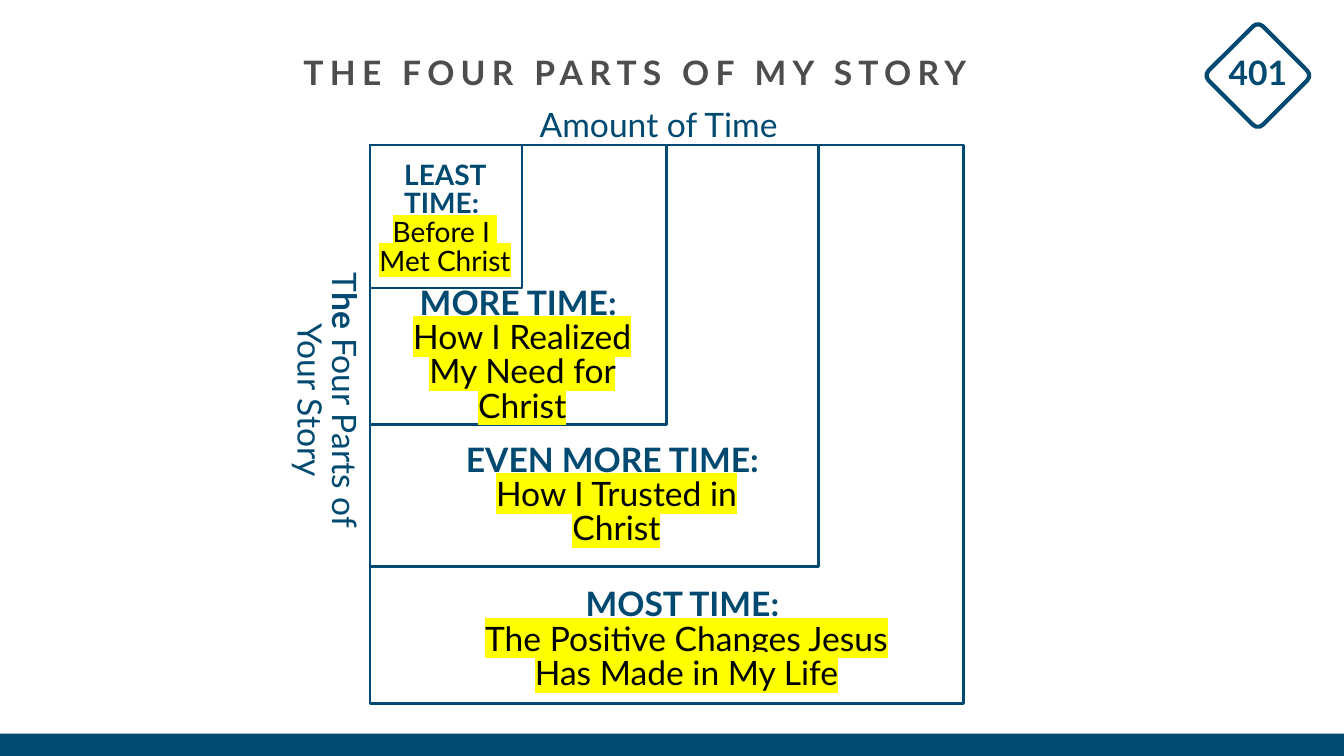
from lxml import etree
from pptx import Presentation
from pptx.dml.color import RGBColor
from pptx.enum.shapes import MSO_SHAPE
from pptx.enum.text import MSO_ANCHOR, PP_ALIGN
from pptx.oxml.ns import qn
from pptx.util import Inches, Pt

RECTANGLE = MSO_SHAPE.RECTANGLE
ROUNDED = MSO_SHAPE.ROUNDED_RECTANGLE
TOP, MIDDLE, BOTTOM = MSO_ANCHOR.TOP, MSO_ANCHOR.MIDDLE, MSO_ANCHOR.BOTTOM
LEFT, CENTER = PP_ALIGN.LEFT, PP_ALIGN.CENTER

NAVY = RGBColor(0x00, 0x49, 0x70)
GRAY = RGBColor(0x4D, 0x4D, 0x4F)
BLACK = RGBColor(0x00, 0x00, 0x00)
YELLOW = RGBColor(0xFF, 0xFF, 0x00)

COLUMNS, ROWS = 64, 36

# Outermost square: left, top, width, height in grid cells
CHART = (17.62, 6.91, 28.27, 26.59)
NESTED_SHARES = (1, 0.755, 0.5, 0.256)

# Place, text size, heading, highlighted lines
STAGES = [
    ((17.66, 6.91, 7.06, 7.1), 20, "LEAST TIME: ", ["Before I ", "Met Christ"]),
    ((18.34, 15.12, 13.06, 3.7), 24, "MORE TIME: ",
     ["How I Realized", "My Need for Christ"]),
    ((21.22, 21.65, 16.27, 3.98), 24, "EVEN MORE TIME: ",
     ["How I Trusted in Christ"]),
    ((21.22, 27.98, 22.94, 5.09), 24, "MOST TIME: ",
     ["The Positive Changes Jesus Has Made in My Life"]),
]


class StorySlide:
    """Draws on one page; every place is left, top, width, height in grid cells."""

    font = "Lato"
    inset = 0.34

    def __init__(self, deck):
        self.cell = deck.slide_width / COLUMNS
        self.page = deck.slides.add_slide(deck.slide_layouts[5])

    def measure(self, *cells):
        return [round(count * self.cell) for count in cells]

    def style(self, span, size, color, bold=False):
        span.font.name = self.font
        span.font.size = Pt(size)
        span.font.color.rgb = color
        span.font.bold = bold

    def highlight(self, span):
        properties = span.font._element
        mark = etree.Element(qn("a:highlight"))
        etree.SubElement(mark, qn("a:srgbClr"), val=str(YELLOW))
        properties.find(qn("a:solidFill")).addnext(mark)

    def frame(self, box, anchor, left, right, wrap=True):
        frame = box.text_frame
        frame.word_wrap = wrap
        frame.vertical_anchor = anchor
        frame.margin_left, frame.margin_right = self.measure(left, right)
        frame.margin_top = frame.margin_bottom = 0
        return frame

    def title(self, place, text):
        box = self.page.shapes.title
        box.left, box.top, box.width, box.height = self.measure(*place)
        frame = self.frame(box, BOTTOM, 0, 0.48)
        frame.text = text
        para = frame.paragraphs[0]
        para.alignment = LEFT
        para.line_spacing = 0.8
        span = para.runs[0]
        self.style(span, 24, GRAY, bold=True)
        span.font._element.set("spc", "450")

    def shape(self, kind, place, fill=None, line=None, width=2):
        shape = self.page.shapes.add_shape(kind, *self.measure(*place))
        shape.shadow.inherit = False
        if fill is None:
            shape.fill.background()
        else:
            shape.fill.solid()
            shape.fill.fore_color.rgb = fill
        if line is None:
            shape.line.fill.background()
        else:
            shape.line.color.rgb = line
            shape.line.width = Pt(width)
        return shape

    def stage(self, place, size, heading, lines):
        box = self.page.shapes.add_textbox(*self.measure(*place))
        frame = self.frame(box, MIDDLE, self.inset, self.inset)
        frame.text = "\n".join([heading, *lines])
        for index, para in enumerate(frame.paragraphs):
            para.alignment = CENTER
            para.line_spacing = 0.85
            span = para.runs[0]
            if index == 0:
                self.style(span, size, NAVY, bold=True)
            else:
                self.style(span, size, BLACK)
                self.highlight(span)

    def label(self, place, pieces, anchor=TOP, rotation=0):
        """Adds one unwrapped line; pieces are pairs of text and bold flag."""
        box = self.page.shapes.add_textbox(*self.measure(*place))
        box.rotation = rotation
        frame = self.frame(box, anchor, self.inset, self.inset, wrap=False)
        para = frame.paragraphs[0]
        para.alignment = CENTER
        para.line_spacing = 0.85
        for text, bold in pieces:
            span = para.add_run()
            span.text = text
            self.style(span, 24, NAVY, bold)

    def badge(self, center_x, center_y, side, text):
        place = (center_x - side / 2, center_y - side / 2, side, side)
        diamond = self.shape(ROUNDED, place, line=NAVY, width=3)
        diamond.adjustments[0] = 0.09
        diamond.rotation = 45
        self.label(place, [(text, True)], anchor=MIDDLE)


def main():
    deck = Presentation()
    deck.slide_width, deck.slide_height = Inches(13.33), Inches(7.5)
    story = StorySlide(deck)

    story.badge(59.9, 3.6, 3.65, "401")
    story.shape(RECTANGLE, (0, ROWS - 1.06, COLUMNS, 1.06), fill=NAVY)
    story.title((14.45, -0.05, 41.57, 4.42), "THE FOUR PARTS OF MY STORY")

    left, top, width, height = CHART
    for share in NESTED_SHARES:
        story.shape(RECTANGLE, (left, top, width * share, height * share), line=NAVY)
    for stage in STAGES:
        story.stage(*stage)

    story.label((24.67, 5.23, 13.39, 0.96), [("Amount of Time", False)])
    story.label((9.94, 18.58, 13.39, 0.96),
                [("T", False), ("he", True), (" Four Parts of Your Story", False)],
                rotation=90)
    deck.save("out.pptx")


if __name__ == "__main__":
    main()
